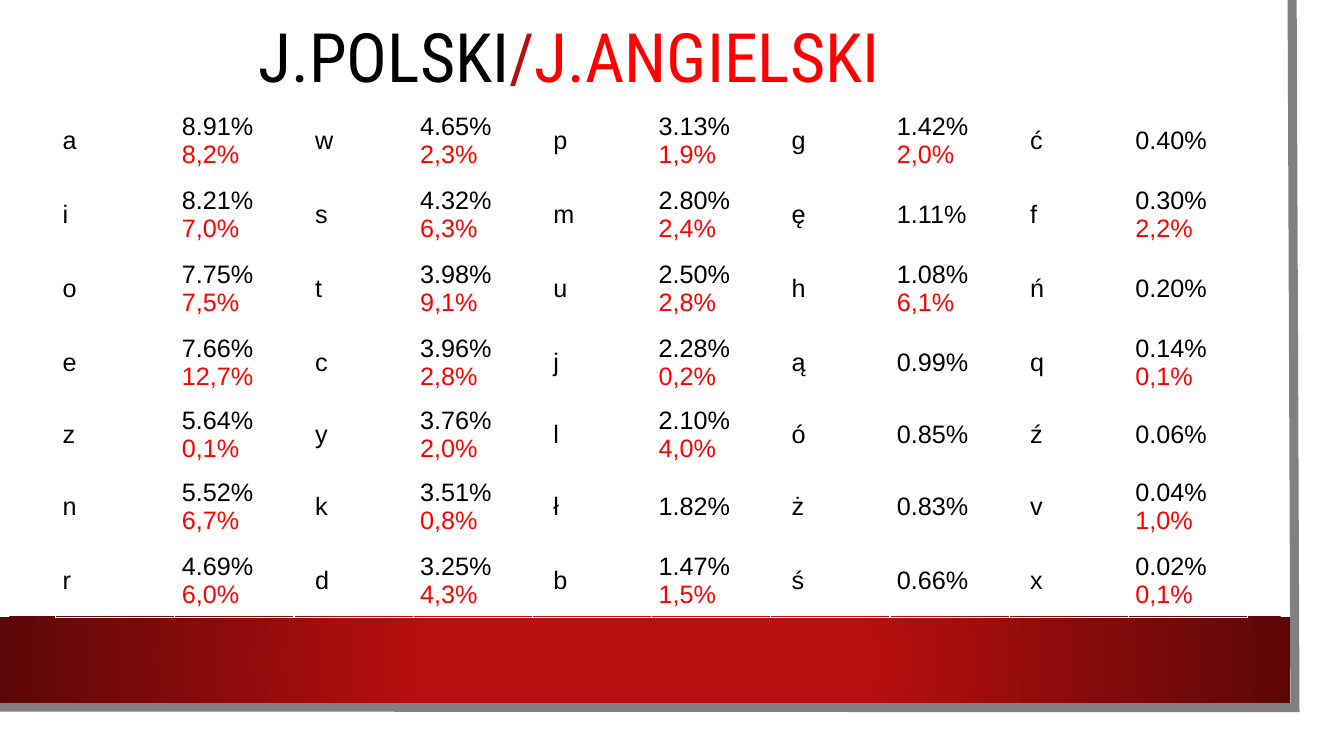
from lxml import etree
from pptx import Presentation
from pptx.dml.color import RGBColor
from pptx.enum.shapes import MSO_SHAPE as Preset
from pptx.enum.text import MSO_ANCHOR as Anchor
from pptx.oxml import parse_xml
from pptx.oxml.ns import nsdecls, qn
from pptx.util import Pt

BLACK = RGBColor(0x00, 0x00, 0x00)
WHITE = RGBColor(0xFF, 0xFF, 0xFF)
GREY = RGBColor(0x80, 0x80, 0x80)
RED = RGBColor(0xFF, 0x00, 0x00)
BAND_RED = RGBColor(0xB8, 0x0E, 0x0F)
BAND_DARK = RGBColor(0x5C, 0x07, 0x07)

TITLE = [("J.POLSKI", BLACK), ("/", BAND_RED), ("J.ANGIELSKI", RED)]

# Each group is a pair of columns: letter, Polish share, English share (if any).
LETTER_GROUPS = [
    [("a", "8.91%", "8,2%"), ("i", "8.21%", "7,0%"), ("o", "7.75%", "7,5%"),
     ("e", "7.66%", "12,7%"), ("z", "5.64%", "0,1%"), ("n", "5.52%", "6,7%"),
     ("r", "4.69%", "6,0%")],
    [("w", "4.65%", "2,3%"), ("s", "4.32%", "6,3%"), ("t", "3.98%", "9,1%"),
     ("c", "3.96%", "2,8%"), ("y", "3.76%", "2,0%"), ("k", "3.51%", "0,8%"),
     ("d", "3.25%", "4,3%")],
    [("p", "3.13%", "1,9%"), ("m", "2.80%", "2,4%"), ("u", "2.50%", "2,8%"),
     ("j", "2.28%", "0,2%"), ("l", "2.10%", "4,0%"), ("ł", "1.82%"),
     ("b", "1.47%", "1,5%")],
    [("g", "1.42%", "2,0%"), ("ę", "1.11%"), ("h", "1.08%", "6,1%"),
     ("ą", "0.99%"), ("ó", "0.85%"), ("ż", "0.83%"), ("ś", "0.66%")],
    [("ć", "0.40%"), ("f", "0.30%", "2,2%"), ("ń", "0.20%"),
     ("q", "0.14%", "0,1%"), ("ź", "0.06%"), ("v", "0.04%", "1,0%"),
     ("x", "0.02%", "0,1%")],
]
ROW_HEIGHTS = [52.8, 52.8, 52.8, 52.8, 46.4, 52.8, 52.8]


def style_font(font, name, size, color):
    font.name = name
    font.size = Pt(size)
    font.color.rgb = color


def add_rect(slide, left, top, width, height):
    rect = slide.shapes.add_shape(
        Preset.RECTANGLE, Pt(left), Pt(top), Pt(width), Pt(height))
    rect.shadow.inherit = False
    rect.line.fill.background()
    rect.fill.solid()
    rect.fill.fore_color.rgb = WHITE
    return rect


def add_radial_fill(shape, inner, inner_stop, outer):
    gradient = parse_xml(
        f'<a:gradFill {nsdecls("a")} rotWithShape="1"><a:gsLst>'
        f'<a:gs pos="{inner_stop * 1000}"><a:srgbClr val="{inner}"/></a:gs>'
        f'<a:gs pos="100000"><a:srgbClr val="{outer}"/></a:gs></a:gsLst>'
        '<a:path path="circle"><a:fillToRect l="50000" t="50000" '
        'r="50000" b="50000"/></a:path></a:gradFill>')
    properties = shape.element.spPr
    properties.replace(properties.find(qn("a:solidFill")), gradient)


def add_sheet(slide, left, top, width, height):
    """White sheet with a grey right and bottom edge and a red band at its foot."""
    add_rect(slide, left, top, width, height)
    right, bottom = left + width - 18, top + height - 18
    outline = slide.shapes.build_freeform(Pt(right - 2), Pt(top))
    outline.add_line_segments(
        [(Pt(right), Pt(bottom)), (Pt(left), Pt(bottom - 0.5))], close=False)
    edge = outline.convert_to_shape()
    edge.shadow.inherit = False
    edge.fill.background()
    edge.line.color.rgb = GREY
    edge.line.width = Pt(6.5)
    etree.SubElement(edge.line._get_or_add_ln(), qn("a:miter"), lim="800000")

    band = add_rect(slide, left, bottom - 65, width - 21.5, 61.5)
    add_radial_fill(band, BAND_RED, 34, BAND_DARK)


def add_title(slide, left, top, width, height):
    frame = slide.shapes.add_textbox(
        Pt(left), Pt(top), Pt(width), Pt(height)).text_frame
    frame.word_wrap = True
    frame.vertical_anchor = Anchor.MIDDLE
    paragraph = frame.paragraphs[0]
    paragraph.line_spacing = 0.9
    for text, color in TITLE:
        run = paragraph.add_run()
        run.text = text
        style_font(run.font, "Roboto Condensed", 48.6, color)


def fill_cell(cell, lines, margin_left):
    cell.fill.background()
    cell.vertical_anchor = Anchor.MIDDLE
    cell.margin_left, cell.margin_right = Pt(margin_left), Pt(5)
    cell.margin_top = cell.margin_bottom = Pt(3.6)
    cell.text_frame.text = "\n".join(lines)
    for paragraph, color in zip(cell.text_frame.paragraphs, (BLACK, RED)):
        style_font(paragraph.runs[0].font, "Arial", 18, color)


def add_frequency_table(slide, left, top, width):
    column_count = 2 * len(LETTER_GROUPS)
    table = slide.shapes.add_table(
        len(ROW_HEIGHTS), column_count,
        Pt(left), Pt(top), Pt(width), Pt(sum(ROW_HEIGHTS))).table
    table.first_row = table.horz_banding = False
    for column in table.columns:
        column.width = Pt(width / column_count)
    for row, height in zip(table.rows, ROW_HEIGHTS):
        row.height = Pt(height)
    for group_index, group in enumerate(LETTER_GROUPS):
        letter_margin = 15 if group_index else 5
        for row_index, (letter, *shares) in enumerate(group):
            fill_cell(table.cell(row_index, 2 * group_index), [letter], letter_margin)
            fill_cell(table.cell(row_index, 2 * group_index + 1), shares, 5)


def main():
    presentation = Presentation()
    presentation.slide_width, presentation.slide_height = Pt(960), Pt(540)
    slide = presentation.slides.add_slide(presentation.slide_layouts[6])
    add_sheet(slide, 0, 0, 943, 523.5)
    add_title(slide, 177.5, 11, 613, 64)
    add_frequency_table(slide, 39.8, 74.2, 851.5)
    presentation.save("out.pptx")


if __name__ == "__main__":
    main()
